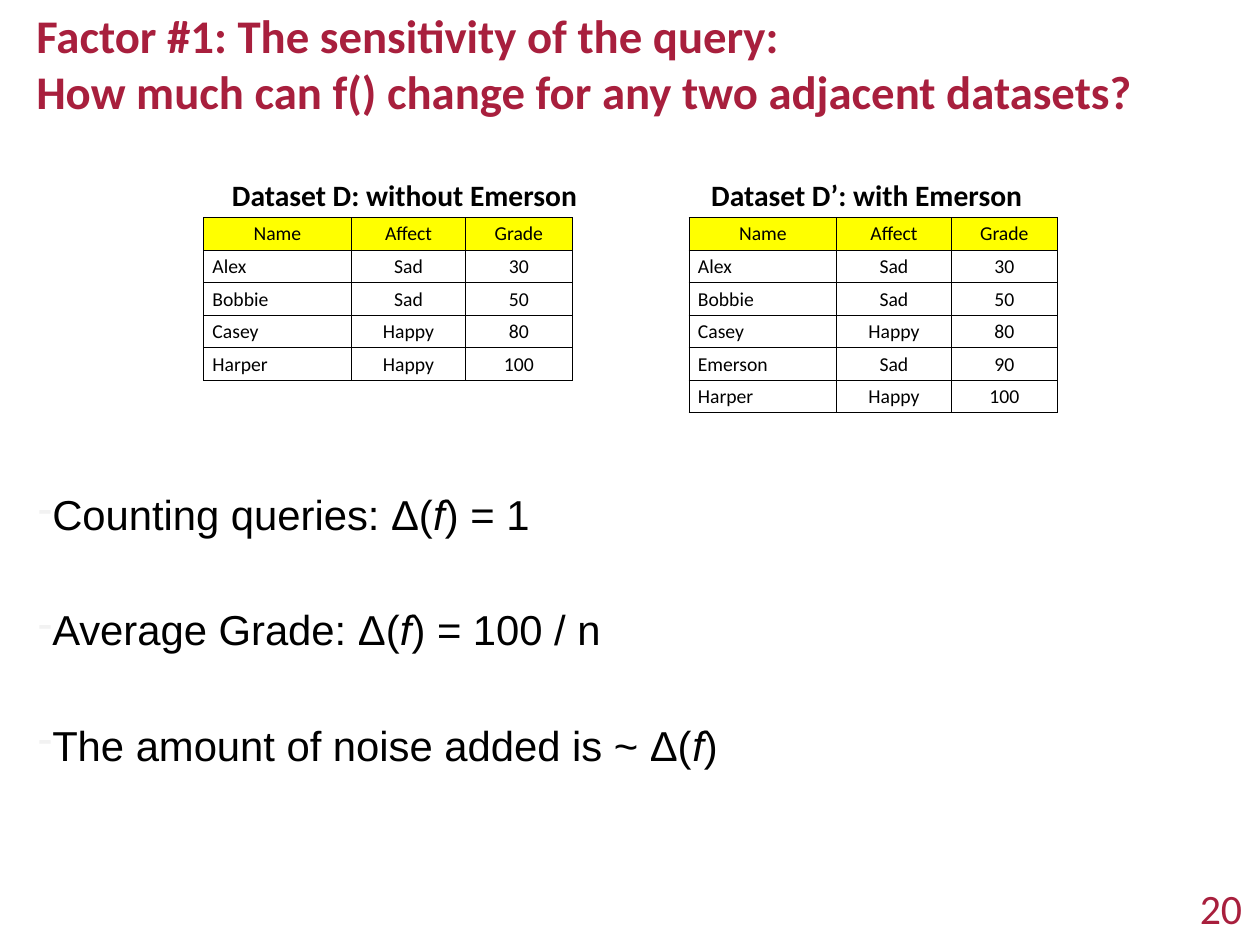
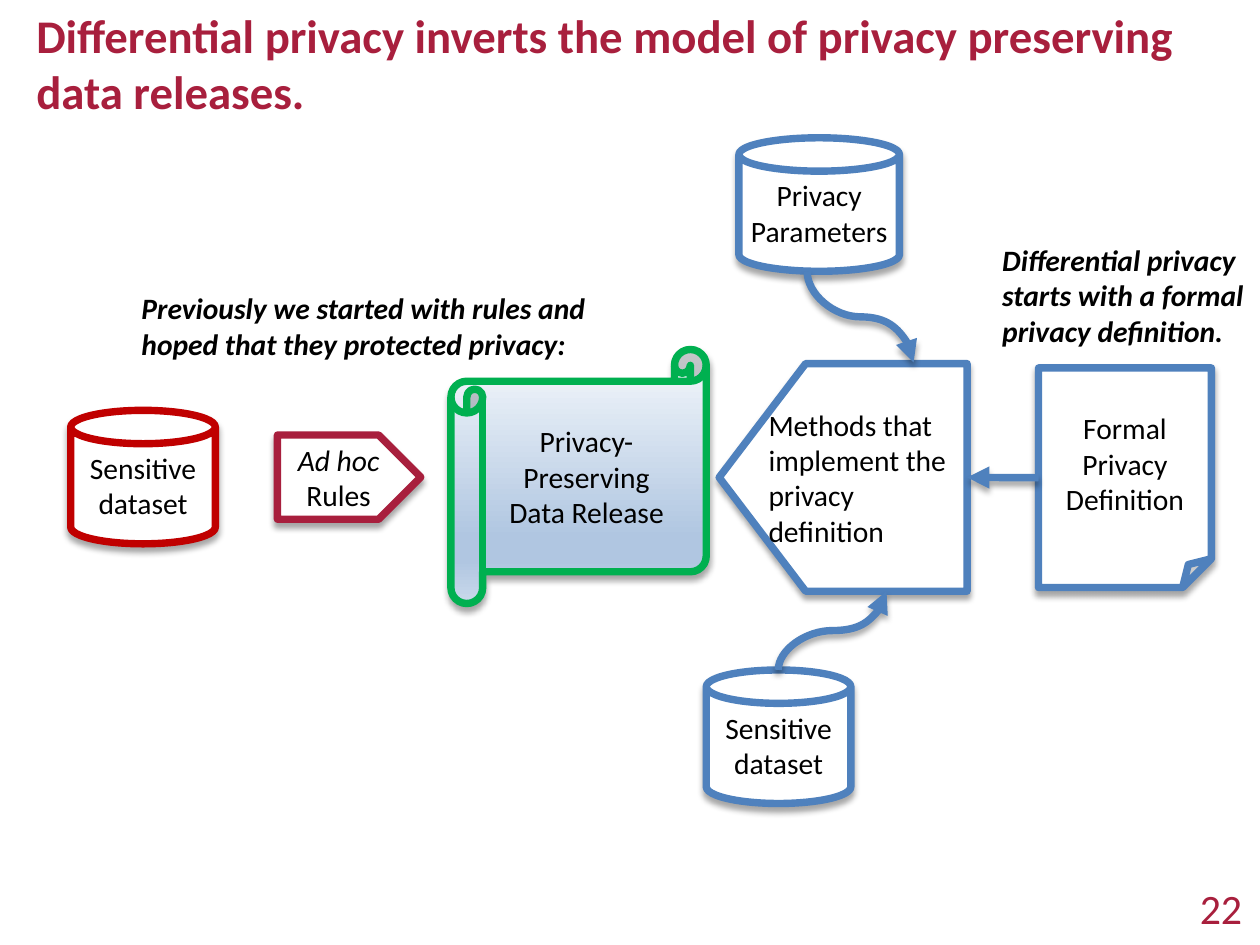
"""Build two slides on query sensitivity and differential privacy."""

import copy
from dataclasses import dataclass
from typing import Any, Sequence

import lxml.etree
import pptx
import pptx.dml.color
import pptx.enum.shapes
import pptx.enum.text
import pptx.oxml.ns
import pptx.util

Pt = pptx.util.Pt
RGBColor = pptx.dml.color.RGBColor
Preset = pptx.enum.shapes.MSO_SHAPE
Connector = pptx.enum.shapes.MSO_CONNECTOR
Align = pptx.enum.text.PP_ALIGN
Anchor = pptx.enum.text.MSO_ANCHOR
qn = pptx.oxml.ns.qn

CRIMSON = RGBColor(0xA8, 0x1F, 0x3D)
BLACK = RGBColor(0, 0, 0)
WHITE = RGBColor(0xFF, 0xFF, 0xFF)
YELLOW = RGBColor(0xFF, 0xFF, 0)
FAINT = RGBColor(0xF2, 0xF2, 0xF2)
BLUE = RGBColor(0x4F, 0x81, 0xBD)
RED = RGBColor(0xC0, 0, 0)
GREEN = RGBColor(0, 0xB0, 0x50)
MIST = RGBColor(0xF6, 0xF9, 0xFC)
STEEL = RGBColor(0xB0, 0xC6, 0xE1)
PALE = RGBColor(0xCA, 0xD9, 0xEB)
SCROLL_STOPS = ((0, MIST), (0.74, STEEL), (0.83, STEEL), (1, PALE))

INSET = 5
LINE_WIDTH = 6
COLUMN_WIDTHS = (120, 93, 86.5)
ROW_HEIGHT = 26.4
TABLE_TOP = 177


@dataclass(frozen=True)
class Area:
    left: float
    top: float
    width: float
    height: float

    def lengths(self) -> list[Any]:
        return [Pt(n) for n in (self.left, self.top, self.width, self.height)]


@dataclass(frozen=True)
class Node:
    name: str
    preset: Any
    area: Area
    paragraphs: Sequence[str]
    line: RGBColor = BLUE
    align: Any = Align.CENTER
    flipped: bool = False
    adjustment: float | None = None
    stops: Sequence[tuple[float, RGBColor]] = ()


@dataclass(frozen=True)
class Dataset:
    caption: str
    caption_left: float
    left: float
    rows: Sequence[Sequence[str]]


HEADER = ("Name", "Affect", "Grade")
PEOPLE = (
    ("Alex", "Sad", "30"),
    ("Bobbie", "Sad", "50"),
    ("Casey", "Happy", "80"),
    ("Harper", "Happy", "100"),
)
EMERSON = ("Emerson", "Sad", "90")
DATASETS = (
    Dataset("Dataset D: without Emerson", 183.5, 165.5, PEOPLE),
    Dataset("Dataset D’: with Emerson", 573, 560, (*PEOPLE[:3], EMERSON, PEOPLE[3])),
)
QUERIES = (
    "Counting queries: Δ(*f*) = 1",
    "Average Grade: Δ(*f*) = 100 / n",
    "The amount of noise added is ~ Δ(*f*)",
)
NODES = (
    Node("dataset before", Preset.CAN, Area(57.5, 333.5, 117.5, 108.5),
         ["Sensitive dataset"], line=RED),
    Node("rules", Preset.PENTAGON, Area(225.5, 353.5, 116.5, 68.5),
         ["*Ad hoc *Rules"], line=CRIMSON),
    Node("release", Preset.HORIZONTAL_SCROLL, Area(366.5, 284, 207.5, 206.5),
         ["Privacy-Preserving", "Data Release"], line=GREEN, stops=SCROLL_STOPS),
    Node("definition", Preset.FOLDED_CORNER, Area(844, 299, 140.5, 178.5),
         ["Formal Privacy", "Definition"]),
    Node("methods", Preset.PENTAGON, Area(584.5, 295.5, 201.5, 185),
         ["Methods that implement the privacy definition"],
         align=Align.LEFT, flipped=True, adjustment=0.38),
    Node("dataset", Preset.CAN, Area(574, 544.5, 117.5, 108.5), ["Sensitive dataset"]),
    Node("parameters", Preset.CAN, Area(600.5, 112, 130.5, 108.5),
         ["Privacy Parameters"]),
)
NOTES = (
    (Area(110, 231, 376.5, 68.5),
     "Previously we started with rules and hoped that they protected privacy:"),
    (Area(809.5, 191.5, 212, 98),
     "Differential privacy starts with a formal privacy definition."),
)


def write_text(
    frame: Any, paragraphs: Sequence[str], *, size: float = 24, font: str = "Calibri",
    color: RGBColor = BLACK, bold: bool = False, italic: bool = False,
    align: Any = Align.LEFT, anchor: Any = Anchor.TOP, gap: float = 0,
    bullet: str = "", indent: float = 0,
) -> None:
    """Fill a frame; asterisks enclose italics and a newline breaks the line."""
    frame.word_wrap = True
    frame.vertical_anchor = anchor
    for index, text in enumerate(paragraphs):
        para = frame.add_paragraph() if index else frame.paragraphs[0]
        para.alignment = align
        if index and gap:
            para.space_before = Pt(gap)
        if bullet:
            add_bullet(para, bullet, indent)
        for part, piece in enumerate(text.split("*")):
            for number, line in enumerate(piece.split("\n")):
                if number:
                    para.add_line_break()
                if not line:
                    continue
                span = para.add_run()
                span.text = line
                span.font.name = font
                span.font.size = Pt(size)
                span.font.bold = bold
                span.font.italic = italic or part % 2 == 1
                span.font.color.rgb = color


def add_bullet(para: Any, mark: str, indent: float) -> None:
    """Give a paragraph a faint hanging bullet."""
    properties = para._p.get_or_add_pPr()
    properties.set("marL", str(Pt(indent)))
    properties.set("indent", str(-Pt(indent)))
    tint = lxml.etree.SubElement(properties, qn("a:buClr"))
    lxml.etree.SubElement(tint, qn("a:srgbClr"), val=str(FAINT))
    lxml.etree.SubElement(properties, qn("a:buChar"), char=mark)


def set_insets(frame: Any) -> None:
    """Set the same inset on every side."""
    frame.margin_left = frame.margin_right = Pt(INSET)
    frame.margin_top = frame.margin_bottom = Pt(INSET)


def add_label(page: Any, area: Area, paragraphs: Sequence[str], **style: Any) -> None:
    """Place a text box."""
    box = page.shapes.add_textbox(*area.lengths())
    set_insets(box.text_frame)
    write_text(box.text_frame, paragraphs, **style)


def add_page(deck: Any, title: str, number: int) -> Any:
    """Add a blank page with the shared title and page number."""
    page = deck.slides.add_slide(deck.slide_layouts[6])
    add_label(page, Area(24.5, 0, 973, 101.5), [title], size=38, color=CRIMSON,
              bold=True, anchor=Anchor.MIDDLE)
    add_label(page, Area(951, 712, 63.5, 52), [str(number)], size=34, color=CRIMSON,
              align=Align.RIGHT, anchor=Anchor.MIDDLE)
    return page


def add_shadow(item: Any) -> None:
    """Give a shape or connector a soft shadow below it."""
    properties = item._element.spPr
    effects = properties.find(qn("a:effectLst"))
    if effects is None:
        effects = lxml.etree.SubElement(properties, qn("a:effectLst"))
    shadow = lxml.etree.SubElement(
        effects, qn("a:outerShdw"), blurRad=str(Pt(5)), dist=str(Pt(4)),
        dir="5400000", rotWithShape="0")
    tint = lxml.etree.SubElement(shadow, qn("a:srgbClr"), val=str(BLACK))
    lxml.etree.SubElement(tint, qn("a:alpha"), val="35000")


def add_gradient(shape: Any, stops: Sequence[tuple[float, RGBColor]]) -> None:
    """Fill a shape with a gradient from top to bottom."""
    shape.fill.gradient()
    shape.fill.gradient_angle = 270
    stop_list = shape._element.spPr.find(".//" + qn("a:gsLst"))
    while len(stop_list) < len(stops):
        stop_list.append(copy.deepcopy(stop_list[-1]))
    for stop, (position, color) in zip(shape.fill.gradient_stops, stops):
        stop.position = position
        stop.color.rgb = color


def add_node(page: Any, node: Node) -> Any:
    """Draw one outlined shape of the diagram."""
    shape = page.shapes.add_shape(node.preset, *node.area.lengths())
    if node.adjustment is not None:
        shape.adjustments[0] = node.adjustment
    if node.flipped:
        shape._element.spPr.xfrm.set("flipH", "1")
    if node.stops:
        add_gradient(shape, node.stops)
    else:
        shape.fill.solid()
        shape.fill.fore_color.rgb = WHITE
    shape.line.color.rgb = node.line
    shape.line.width = Pt(LINE_WIDTH)
    shape.shadow.inherit = False
    add_shadow(shape)
    set_insets(shape.text_frame)
    write_text(shape.text_frame, node.paragraphs, align=node.align, anchor=Anchor.MIDDLE)
    return shape


def add_arrow(page: Any, kind: Any, x1: float, y1: float, x2: float, y2: float) -> Any:
    """Draw an arrow with a triangular head at its end."""
    arrow = page.shapes.add_connector(kind, Pt(x1), Pt(y1), Pt(x2), Pt(y2))
    arrow.line.color.rgb = BLUE
    arrow.line.width = Pt(LINE_WIDTH)
    lxml.etree.SubElement(arrow.line._get_or_add_ln(), qn("a:tailEnd"), type="triangle")
    add_shadow(arrow)
    return arrow


def add_curve(page: Any, x1: float, y1: float, x2: float, y2: float) -> None:
    """Draw a curved arrow to the right that leaves and arrives vertically."""
    width, height = abs(y2 - y1), x2 - x1
    left, top = (x1 + x2 - width) / 2, (y1 + y2 - height) / 2
    arrow = add_arrow(page, Connector.CURVE, left, top, left + width, top + height)
    frame = arrow._element.spPr.xfrm
    frame.set("flipH", "1")
    frame.set("rot", "16200000" if y2 > y1 else "5400000")
    if y2 < y1:
        frame.set("flipV", "1")


def add_borders(cell: Any) -> None:
    """Outline a cell in black."""
    properties = cell._tc.get_or_add_tcPr()
    for side in ("lnL", "lnR", "lnT", "lnB"):
        line = lxml.etree.SubElement(properties, qn(f"a:{side}"), w=str(Pt(1)))
        fill = lxml.etree.SubElement(line, qn("a:solidFill"))
        lxml.etree.SubElement(fill, qn("a:srgbClr"), val=str(BLACK))


def add_dataset(page: Any, dataset: Dataset) -> None:
    """Draw a captioned table."""
    rows = (HEADER, *dataset.rows)
    area = Area(dataset.left, TABLE_TOP, sum(COLUMN_WIDTHS), ROW_HEIGHT * len(rows))
    table = page.shapes.add_table(len(rows), len(HEADER), *area.lengths()).table
    table.first_row = table.horz_banding = False
    for column, width in zip(table.columns, COLUMN_WIDTHS):
        column.width = Pt(width)
    for r, row in enumerate(rows):
        table.rows[r].height = Pt(ROW_HEIGHT)
        for c, text in enumerate(row):
            cell = table.cell(r, c)
            add_borders(cell)
            cell.fill.solid()
            cell.fill.fore_color.rgb = WHITE if r else YELLOW
            write_text(cell.text_frame, [text], size=16,
                       align=Align.LEFT if r and not c else Align.CENTER)
    add_label(page, Area(dataset.caption_left, 139, 300, 39.5), [dataset.caption], bold=True)


def main() -> None:
    """Build and save the deck."""
    deck = pptx.Presentation()
    deck.slide_width, deck.slide_height = Pt(1024), Pt(768)

    page = add_page(deck, "Factor #1: The sensitivity of the query: \n"
                    "How much can f() change for any two adjacent datasets?", 20)
    for dataset in DATASETS:
        add_dataset(page, dataset)
    add_label(page, Area(26, 392.5, 972.5, 250), QUERIES, size=34, font="Arial",
              gap=52.7, bullet="-", indent=11.5)

    page = add_page(deck, "Differential privacy inverts the model of privacy "
                    "preserving data releases.", 22)
    shapes = {node.name: add_node(page, node) for node in NODES}
    add_curve(page, 656, 220.5, 742.5, 294.5)
    add_curve(page, 632.5, 544.5, 720.5, 480.5)
    arrow = add_arrow(page, Connector.STRAIGHT, 844, 388, 786, 388)
    arrow.begin_connect(shapes["definition"], 1)
    for area, text in NOTES:
        add_label(page, area, [text], bold=True, italic=True)

    deck.save("out.pptx")


if __name__ == "__main__":
    main()
